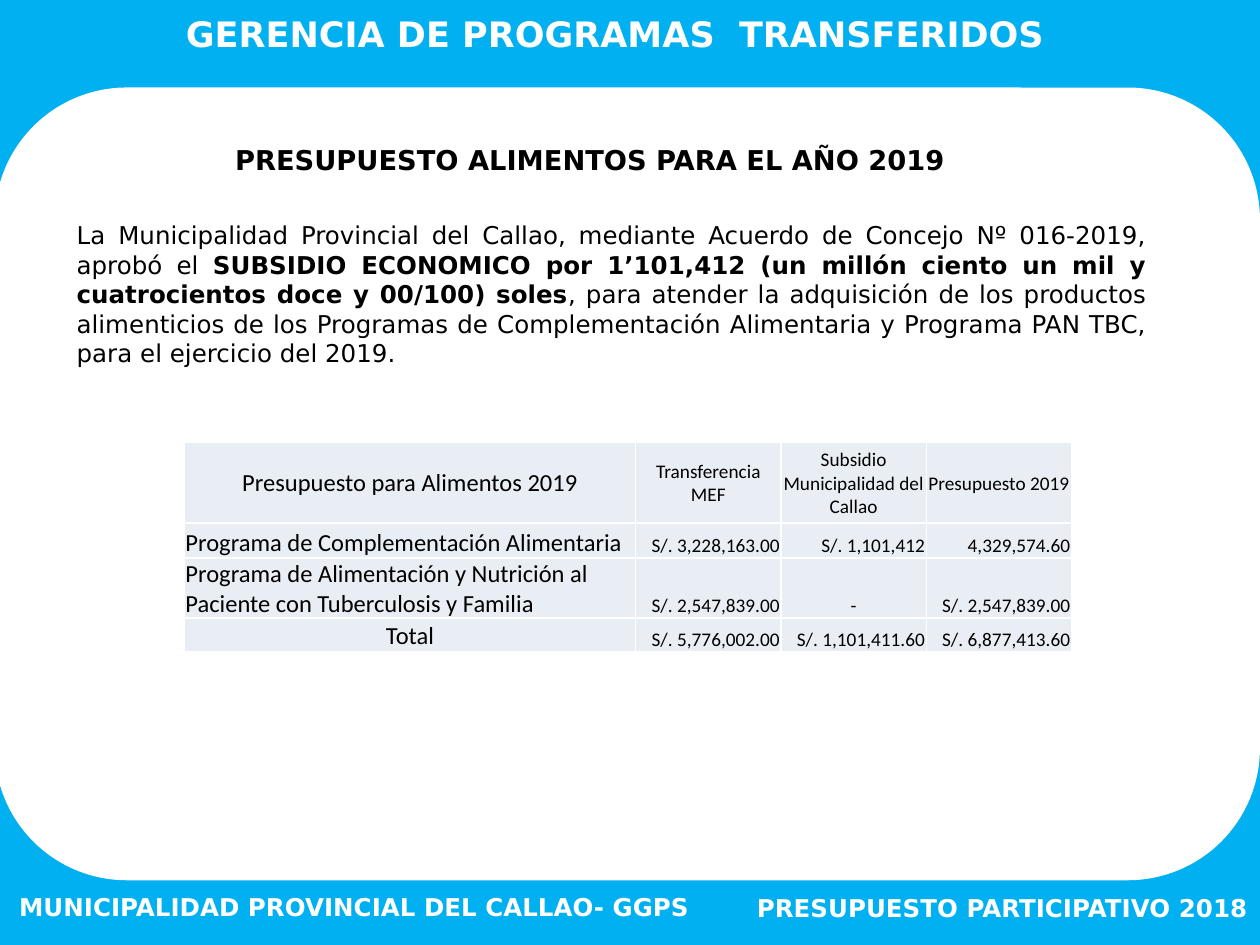
from lxml.etree import SubElement
from pptx import Presentation
from pptx.dml.color import RGBColor
from pptx.enum.shapes import MSO_SHAPE as SHAPE
from pptx.enum.text import MSO_ANCHOR as ANCHOR, PP_ALIGN as ALIGN
from pptx.oxml.ns import qn
from pptx.util import Pt

SKY = RGBColor(0x00, 0xB0, 0xF0)
WHITE = RGBColor(0xFF, 0xFF, 0xFF)
BLACK = RGBColor(0x00, 0x00, 0x00)
PALE = RGBColor(0xE9, 0xED, 0xF4)
SANS, CALIBRI = "DejaVu Sans", "Calibri"

INTRO = [
    ("La Municipalidad Provincial del Callao, mediante Acuerdo de Concejo Nº "
     "016-2019, aprobó el ", False),
    ("SUBSIDIO ECONOMICO por 1’101,412 (un millón ciento un mil y "
     "cuatrocientos doce y 00/100) soles", True),
    (", para atender la adquisición de los productos alimenticios de los "
     "Programas de Complementación Alimentaria y Programa PAN TBC, para el "
     "ejercicio del 2019.", False),
]
BUDGET = [
    ("Presupuesto para Alimentos 2019", "Transferencia MEF",
     "Subsidio Municipalidad del Callao", "Presupuesto 2019"),
    ("Programa de Complementación Alimentaria", "S/. 3,228,163.00",
     "S/. 1,101,412", "4,329,574.60"),
    ("Programa de Alimentación y Nutrición al Paciente con Tuberculosis y Familia",
     "S/. 2,547,839.00", "-", "S/. 2,547,839.00"),
    ("Total", "S/. 5,776,002.00", "S/. 1,101,411.60", "S/. 6,877,413.60"),
]
COL_WIDTHS = (258, 83, 83, 83)
ROW_HEIGHTS = (46, 20, 34, 19)


def style_run(r, size, font, color, bold=False):
    r.font.size, r.font.name, r.font.bold = Pt(size), font, bold
    r.font.color.rgb = color


def add_panel(slide, shape, box, color):
    sp = slide.shapes.add_shape(shape, *map(Pt, box))
    sp.shadow.inherit = False
    sp.fill.solid()
    sp.fill.fore_color.rgb = color
    sp.line.fill.background()


def add_text(slide, box, parts, size, align, color, anchor=ANCHOR.TOP):
    """Add one paragraph made of (text, bold) parts."""
    tf = slide.shapes.add_textbox(*map(Pt, box)).text_frame
    tf.word_wrap = True
    tf.vertical_anchor = anchor
    p = tf.paragraphs[0]
    p.alignment = align
    for text, bold in parts:
        r = p.add_run()
        r.text = text
        style_run(r, size, SANS, color, bold)


def add_frame(slide, box):
    left, top, width, height = box
    add_panel(slide, SHAPE.RECTANGLE, box, SKY)
    add_panel(slide, SHAPE.ROUNDED_RECTANGLE, (left, top + 52, width, 453), WHITE)
    add_text(slide, (47, 3.5, 609, 32),
             [("GERENCIA DE PROGRAMAS  TRANSFERIDOS", True)], 20, ALIGN.CENTER, WHITE)
    foot = top + height - 33.5
    add_text(slide, (405.5, foot, 314.5, 24.5),
             [("PRESUPUESTO PARTICIPATIVO 2018", True)], 14, ALIGN.RIGHT, WHITE)
    add_text(slide, (-24.5, foot - 0.5, 425.5, 24.5),
             [("MUNICIPALIDAD PROVINCIAL DEL CALLAO- GGPS", True)], 14, ALIGN.RIGHT, WHITE)


def border_cell(cell, color):
    tc_pr = cell._tc.get_or_add_tcPr()
    for i, side in enumerate(("lnL", "lnR", "lnT", "lnB")):
        ln = tc_pr.makeelement(qn("a:" + side), {"w": str(Pt(1))})
        fill = SubElement(ln, qn("a:solidFill"))
        SubElement(fill, qn("a:srgbClr"), val=str(color))
        tc_pr.insert(i, ln)


def cell_align(row, col, text):
    if row == 0 or text in ("-", "Total"):
        return ALIGN.CENTER
    return ALIGN.RIGHT if col else ALIGN.LEFT


def add_budget_table(slide, left, top):
    tbl = slide.shapes.add_table(
        len(BUDGET), len(COL_WIDTHS), Pt(left), Pt(top),
        Pt(sum(COL_WIDTHS)), Pt(sum(ROW_HEIGHTS))).table
    for column, width in zip(tbl.columns, COL_WIDTHS):
        column.width = Pt(width)
    for i, (row, height) in enumerate(zip(BUDGET, ROW_HEIGHTS)):
        tbl.rows[i].height = Pt(height)
        for j, text in enumerate(row):
            cell = tbl.cell(i, j)
            cell.margin_left = cell.margin_right = cell.margin_top = Pt(0.7)
            cell.margin_bottom = 0
            cell.vertical_anchor = ANCHOR.BOTTOM if i else ANCHOR.MIDDLE
            cell.fill.solid()
            cell.fill.fore_color.rgb = PALE
            border_cell(cell, WHITE)
            cell.text_frame.text = text
            p = cell.text_frame.paragraphs[0]
            p.alignment = cell_align(i, j, text)
            style_run(p.runs[0], 11 if j else 14, CALIBRI, BLACK)


def main():
    prs = Presentation()
    prs.slide_width, prs.slide_height = Pt(720), Pt(540)
    slide = prs.slides.add_slide(prs.slide_layouts[6])
    add_frame(slide, (-3, -2, 723, 542))
    add_text(slide, (93.5, 65.5, 487.5, 51),
             [("PRESUPUESTO ALIMENTOS PARA EL AÑO 2019", True)],
             15.6, ALIGN.CENTER, BLACK, ANCHOR.MIDDLE)
    add_text(slide, (36.7, 122.4, 625.7, 108.7), INTRO, 14, ALIGN.JUSTIFY, BLACK)
    add_budget_table(slide, 105.3, 252.9)
    prs.save("out.pptx")


if __name__ == "__main__":
    main()
